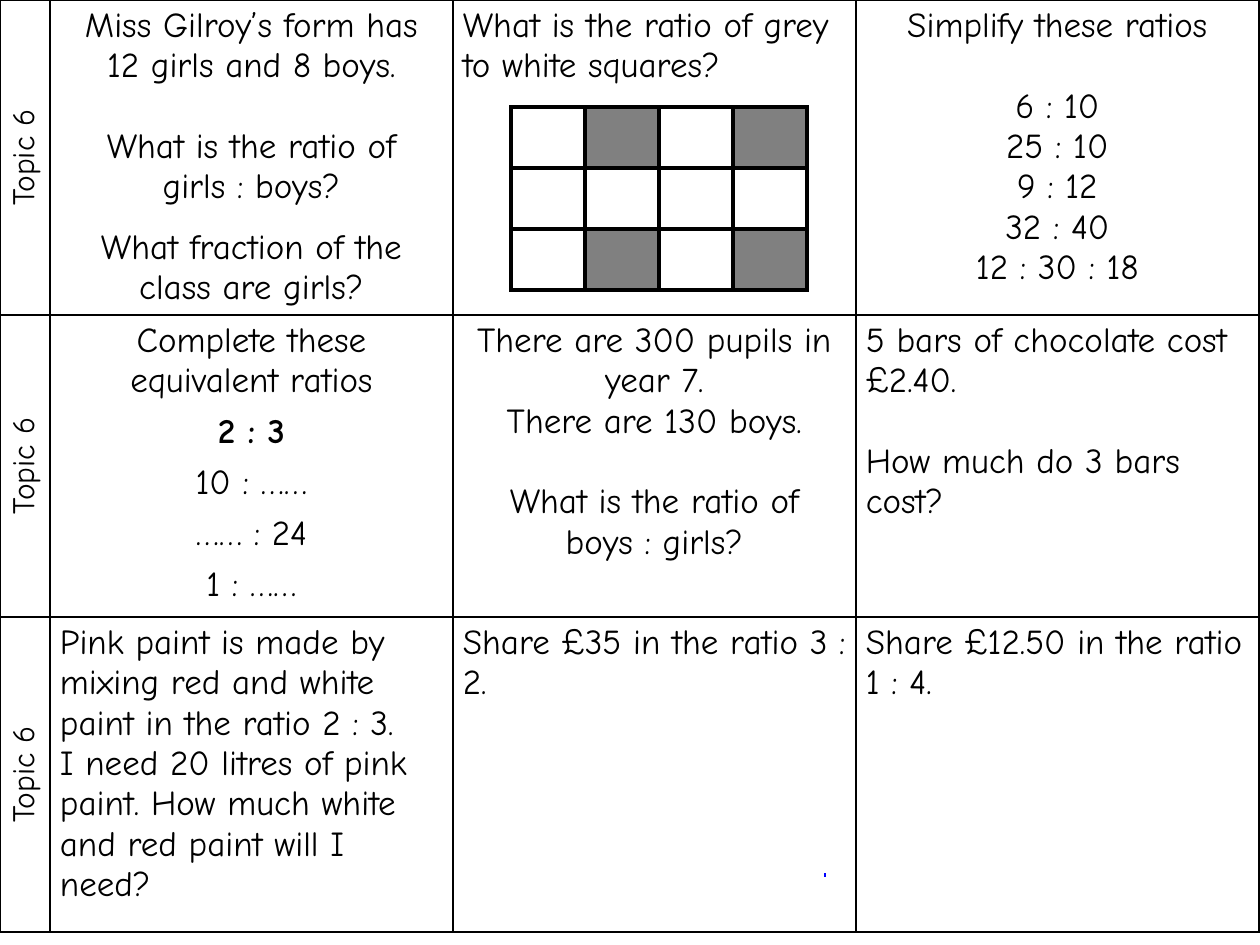
from dataclasses import dataclass

from lxml import etree
from pptx import Presentation
from pptx.dml.color import RGBColor
from pptx.enum.shapes import MSO_CONNECTOR
from pptx.enum.text import PP_ALIGN
from pptx.oxml.ns import qn
from pptx.util import Pt

CENTER, LEFT = PP_ALIGN.CENTER, PP_ALIGN.LEFT
STRAIGHT = MSO_CONNECTOR.STRAIGHT
EMU_PER_PX = 914400 / 126
BLANK_LAYOUT = 6

# Space before a paragraph, in points
FULL_LINE, HALF_LINE, SMALL_GAP = 23, 11.5, 6


def px(length):
    return round(length * EMU_PER_PX)


def rgb(code):
    return RGBColor.from_string(code)


@dataclass
class Line:
    text: str
    before: float = 0
    bold: bool = False


@dataclass
class Sheet:
    page: object
    font: str = "Comic Neue"
    ink: str = "000000"
    grey: str = "808080"

    def table(self, left, top, widths, heights, border):
        frame = self.page.shapes.add_table(
            len(heights), len(widths), px(left), px(top),
            px(sum(widths)), px(sum(heights)))
        table = frame.table
        table.first_row = table.horz_banding = False
        for column, width in zip(table.columns, widths):
            column.width = px(width)
        for row, height in zip(table.rows, heights):
            row.height = px(height)
        for cell in table.iter_cells():
            self.borders(cell, border)
            cell.fill.background()
        return table

    def borders(self, cell, points):
        properties = cell._tc.get_or_add_tcPr()
        for side in ("a:lnL", "a:lnR", "a:lnT", "a:lnB"):
            edge = etree.SubElement(properties, qn(side), w=str(Pt(points)))
            fill = etree.SubElement(edge, qn("a:solidFill"))
            etree.SubElement(fill, qn("a:srgbClr"), val=self.ink)

    def cell_text(self, cell, lines, align, size=20):
        cell.margin_left = cell.margin_right = px(10)
        cell.margin_top = cell.margin_bottom = px(6)
        frame = cell.text_frame
        for index, line in enumerate(lines):
            para = frame.add_paragraph() if index else frame.paragraphs[0]
            para.text = line.text
            para.alignment = align
            if line.before:
                para.space_before = Pt(line.before)
            font = para.font
            font.name, font.size, font.bold = self.font, Pt(size), line.bold
            font.color.rgb = rgb(self.ink)

    def side_label(self, cell, text):
        """Set text that reads from bottom to top."""
        self.cell_text(cell, [Line(text)], CENTER, 18)
        cell._tc.get_or_add_tcPr().set("vert", "vert270")

    def shade(self, cell):
        cell.fill.solid()
        cell.fill.fore_color.rgb = rgb(self.grey)

    def stroke(self, start, end, color, points):
        line = self.page.shapes.add_connector(
            STRAIGHT, *(px(value) for value in (*start, *end)))
        line.line.color.rgb = rgb(color)
        line.line.width = Pt(points)
        etree.SubElement(line._element.spPr, qn("a:effectLst"))


QUESTIONS = [
    [
        (CENTER, [Line("Miss Gilroy’s form has"),
                  Line("12 girls and 8 boys."),
                  Line("What is the ratio of", FULL_LINE),
                  Line("girls : boys?"),
                  Line("What fraction of the class are girls?", HALF_LINE)]),
        (LEFT, [Line("What is the ratio of grey to white squares?")]),
        (CENTER, [Line("Simplify these ratios"),
                  Line("6 : 10", FULL_LINE),
                  Line("25 : 10"),
                  Line("9 : 12"),
                  Line("32 : 40"),
                  Line("12 : 30 : 18")]),
    ],
    [
        (CENTER, [Line("Complete these equivalent ratios"),
                  Line("2 : 3", SMALL_GAP, bold=True),
                  Line("10 : ……", SMALL_GAP),
                  Line("…… : 24", SMALL_GAP),
                  Line("1 : ……", SMALL_GAP)]),
        (CENTER, [Line("There are 300 pupils in year 7."),
                  Line("There are 130 boys."),
                  Line("What is the ratio of boys : girls?", FULL_LINE)]),
        (LEFT, [Line("5 bars of chocolate cost £2.40."),
                Line("How much do 3 bars cost?", FULL_LINE)]),
    ],
    [
        (LEFT, [Line("Pink paint is made by mixing red and white paint "
                     "in the ratio 2 : 3."),
                Line("I need 20 litres of pink paint. How much white "
                     "and red paint will I need?")]),
        (LEFT, [Line("Share £35 in the ratio 3 : 2.")]),
        (LEFT, [Line("Share £12.50 in the ratio 1 : 4.")]),
    ],
]


def main():
    deck = Presentation()
    deck.slide_width, deck.slide_height = px(1260), px(945)
    sheet = Sheet(deck.slides.add_slide(deck.slide_layouts[BLANK_LAYOUT]))

    cards = sheet.table(0, 0, [50] + [403] * 3, [315, 302, 315], border=1)
    for row, questions in enumerate(QUESTIONS):
        sheet.side_label(cards.cell(row, 0), "Topic 6")
        for column, (align, lines) in enumerate(questions, start=1):
            sheet.cell_text(cards.cell(row, column), lines, align)

    squares = sheet.table(511, 107, [74] * 4, [61] * 3, border=2.25)
    for row in (0, 2):
        for column in (1, 3):
            sheet.shade(squares.cell(row, column))

    sheet.stroke((825, 877), (825, 873), "0000FF", 1.5)
    deck.save("out.pptx")


if __name__ == "__main__":
    main()
